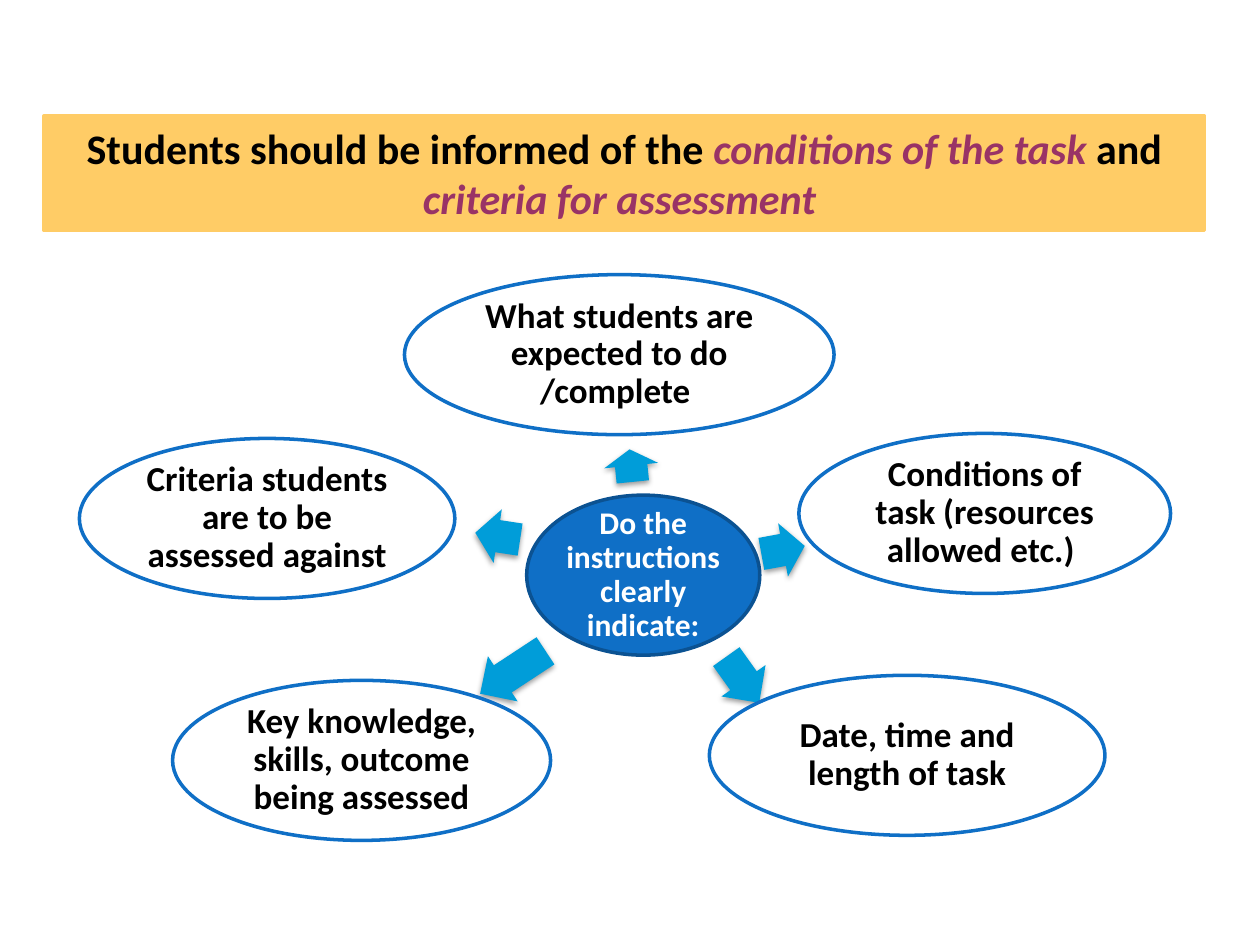
from typing import NamedTuple

from lxml import etree
from pptx import Presentation
from pptx import util as u
from pptx.dml.color import RGBColor
from pptx.enum import shapes, text
from pptx.oxml import ns

BLUE, DARK_BLUE, SKY = "0F6FC6", "0B5292", "009DD9"
WHITE, BLACK, AMBER, PLUM = "FFFFFF", "000000", "FFCC66", "993366"
OVAL_HEIGHT = 1.27
ARROW_HEIGHT = 0.43


class Oval(NamedTuple):
    left: float
    top: float
    width: float
    words: str
    size: int = 20
    fill: str = WHITE
    line: str = BLUE
    ink: str = BLACK


class Arrow(NamedTuple):
    left: float
    top: float
    width: float
    rotation: float


class Phrase(NamedTuple):
    words: str
    color: str = BLACK
    italic: bool = False


HUB = Oval(4.18, 3.93, 1.85, "Do the instructions clearly indicate:",
           18, BLUE, DARK_BLUE, WHITE)
SPOKES = [
    (Arrow(4.88, 3.48, 0.26, 264.2),
     Oval(3.21, 2.18, 3.41, "What students are expected to do /complete ")),
    (Arrow(6.04, 4.15, 0.35, 349.6),
     Oval(6.34, 3.44, 2.95, "Conditions of task (resources allowed etc.) ")),
    (Arrow(5.67, 5.18, 0.45, 54.5),
     Oval(5.63, 5.36, 3.14, "Date, time and length of task")),
    (Arrow(3.76, 5.12, 0.62, 146.7),
     Oval(1.37, 5.4, 3, "Key knowledge, skills, outcome being assessed")),
    (Arrow(3.77, 4.04, 0.36, 188.7),
     Oval(0.63, 3.48, 2.98, "Criteria students are to be assessed against")),
]
BANNER = [
    Phrase("Students should be informed of the "),
    Phrase("conditions of the task ", PLUM, True),
    Phrase("and "),
    Phrase("criteria for assessment ", PLUM, True),
]


def rgb(value: str) -> RGBColor:
    return RGBColor.from_string(value)


def add_filled(page, kind, left: float, top: float, width: float,
               height: float, fill: str, line: str = ""):
    """Add a preset shape without shadow; an empty line colour means no outline."""
    shape = page.shapes.add_shape(kind, *map(u.Inches, (left, top, width, height)))
    shape.shadow.inherit = False
    shape.fill.solid()
    shape.fill.fore_color.rgb = rgb(fill)
    if line:
        shape.line.color.rgb = rgb(line)
        shape.line.width = u.Pt(2)
    else:
        shape.line.fill.background()
    return shape


def add_span(para, phrase: Phrase, size: int) -> None:
    span = para.add_run()
    span.text = phrase.words
    style = {"name": "Calibri", "size": u.Pt(size), "bold": True,
             "italic": phrase.italic}
    for name, value in style.items():
        setattr(span.font, name, value)
    span.font.color.rgb = rgb(phrase.color)


def add_oval(page, oval: Oval) -> None:
    shape = add_filled(page, shapes.MSO_SHAPE.OVAL, oval.left, oval.top,
                       oval.width, OVAL_HEIGHT, oval.fill, oval.line)
    frame = shape.text_frame
    frame.word_wrap = True
    frame.vertical_anchor = text.MSO_ANCHOR.MIDDLE
    for side in ("left", "right", "top", "bottom"):
        setattr(frame, f"margin_{side}", u.Inches(0.03))
    para = frame.paragraphs[0]
    para.alignment = text.PP_ALIGN.CENTER
    para.line_spacing = 0.9
    add_span(para, Phrase(oval.words, oval.ink), oval.size)


def add_drop_shadow(shape) -> None:
    effects = shape._element.spPr.find(ns.qn("a:effectLst"))
    shadow = etree.SubElement(
        effects, ns.qn("a:outerShdw"), blurRad=str(u.Pt(3.1)),
        dist=str(u.Pt(1.6)), dir="5400000", rotWithShape="0")
    color = etree.SubElement(shadow, ns.qn("a:srgbClr"), val=BLACK)
    etree.SubElement(color, ns.qn("a:alpha"), val="38000")


def add_arrow(page, arrow: Arrow) -> None:
    shape = add_filled(page, shapes.MSO_SHAPE.RIGHT_ARROW, arrow.left, arrow.top,
                       arrow.width, ARROW_HEIGHT, SKY)
    shape.rotation = arrow.rotation
    shape.adjustments[0] = 0.6
    shape.adjustments[1] = 0.5
    add_drop_shadow(shape)


def add_banner(page, phrases: list[Phrase]) -> None:
    shape = add_filled(page, shapes.MSO_SHAPE.RECTANGLE, 0.35, 0.92, 9.21, 0.91,
                       AMBER, AMBER)
    frame = shape.text_frame
    frame.word_wrap = True
    frame.vertical_anchor = text.MSO_ANCHOR.TOP
    para = frame.paragraphs[0]
    para.alignment = text.PP_ALIGN.CENTER
    for phrase in phrases:
        add_span(para, phrase, 24)


def main() -> None:
    deck = Presentation()
    deck.slide_width, deck.slide_height = u.Inches(10), u.Inches(7.5)
    page = deck.slides.add_slide(deck.slide_layouts[6])
    add_oval(page, HUB)
    for arrow, oval in SPOKES:
        add_arrow(page, arrow)
        add_oval(page, oval)
    add_banner(page, BANNER)
    deck.save("out.pptx")


if __name__ == "__main__":
    main()
